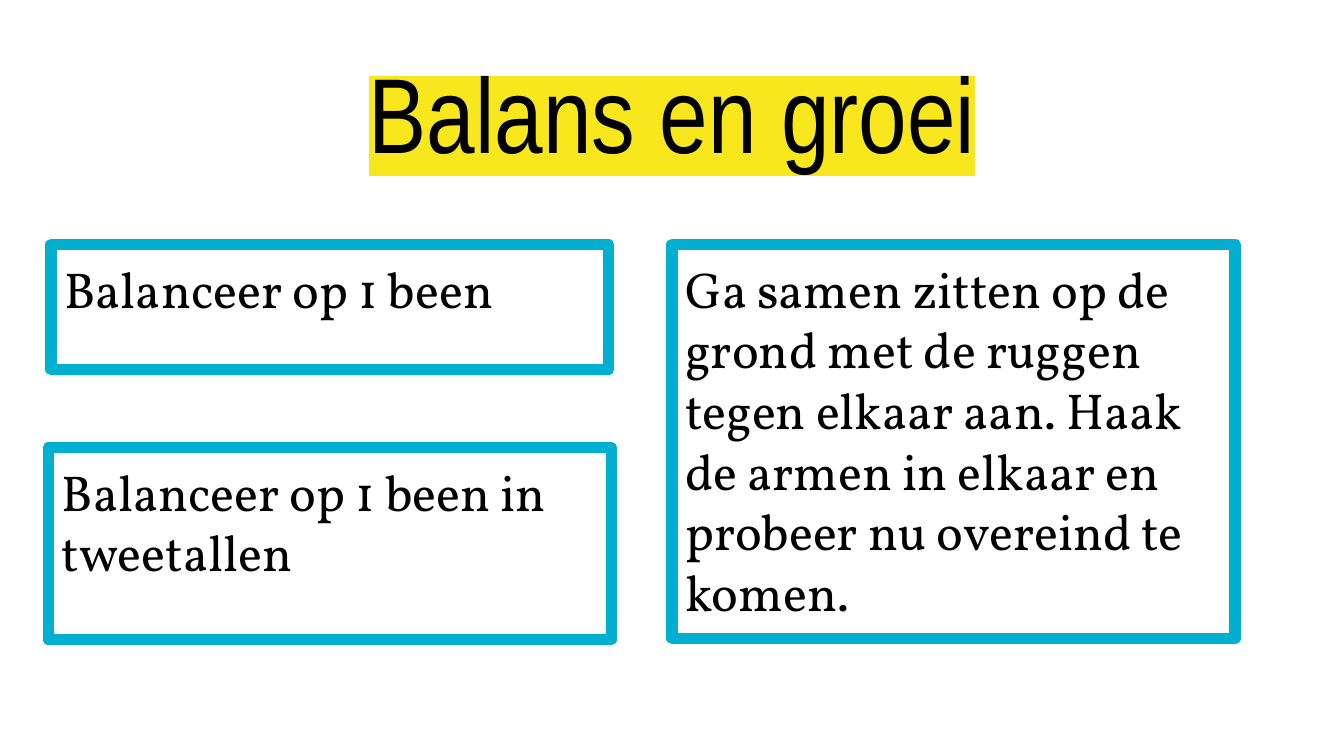
from lxml import etree
from pptx import Presentation
from pptx.dml.color import RGBColor
from pptx.enum import shapes, text
from pptx.oxml import ns
from pptx.util import Inches, Pt

THEME = {
    "ink": "000000", "border": "01AFD1", "highlight": "F8E71C",
    "title_font": "Arial Narrow", "body_font": "Vollkorn",
    "title_size": 57, "body_size": 27, "border_width": 6,
}
TITLE = ("Balans en groei", (0.34, 0.25, 9.32, 0.63))
EXERCISES = [
    ("Balanceer op 1 been", (0.38, 1.82, 4.15, 0.93)),
    ("Balanceer op 1 been in tweetallen", (0.36, 3.33, 4.19, 1.43)),
    ("Ga samen zitten op de grond met de ruggen tegen elkaar aan. "
     "Haak de armen in elkaar en probeer nu overeind te komen.",
     (5, 1.82, 4.19, 2.93)),
]


def write(shape, words, font_name, size, alignment):
    frame = shape.text_frame
    frame.word_wrap = True
    frame.vertical_anchor = text.MSO_ANCHOR.TOP
    frame.margin_left = frame.margin_right = Inches(0.1)
    frame.margin_top = frame.margin_bottom = Inches(0.1)
    frame.text = words
    paragraph = frame.paragraphs[0]
    paragraph.alignment = alignment
    run = paragraph.runs[0]
    run.font.name = font_name
    run.font.size = Pt(size)
    run.font.color.rgb = RGBColor.from_string(THEME["ink"])
    return run


def highlight(run, color):
    """Insert the highlight right after the run's fill, as the schema orders."""
    properties = run.font._element
    mark = etree.Element(ns.qn("a:highlight"))
    etree.SubElement(mark, ns.qn("a:srgbClr"), val=color)
    properties.find(ns.qn("a:solidFill")).addnext(mark)


def add_title(slide):
    words, place = TITLE
    shape = slide.shapes.add_textbox(*map(Inches, place))
    run = write(shape, words, THEME["title_font"], THEME["title_size"],
                text.PP_ALIGN.CENTER)
    highlight(run, THEME["highlight"])


def add_exercise(slide, words, place):
    shape = slide.shapes.add_shape(shapes.MSO_SHAPE.RECTANGLE, *map(Inches, place))
    shape.shadow.inherit = False
    shape.fill.background()
    shape.line.color.rgb = RGBColor.from_string(THEME["border"])
    shape.line.width = Pt(THEME["border_width"])
    etree.SubElement(shape.line._get_or_add_ln(), ns.qn("a:round"))
    write(shape, words, THEME["body_font"], THEME["body_size"], text.PP_ALIGN.LEFT)


def main():
    presentation = Presentation()
    presentation.slide_width = Inches(10)
    presentation.slide_height = presentation.slide_width * 9 // 16
    slide = presentation.slides.add_slide(presentation.slide_layouts[6])
    add_title(slide)
    for words, place in EXERCISES:
        add_exercise(slide, words, place)
    presentation.save("out.pptx")


if __name__ == "__main__":
    main()
